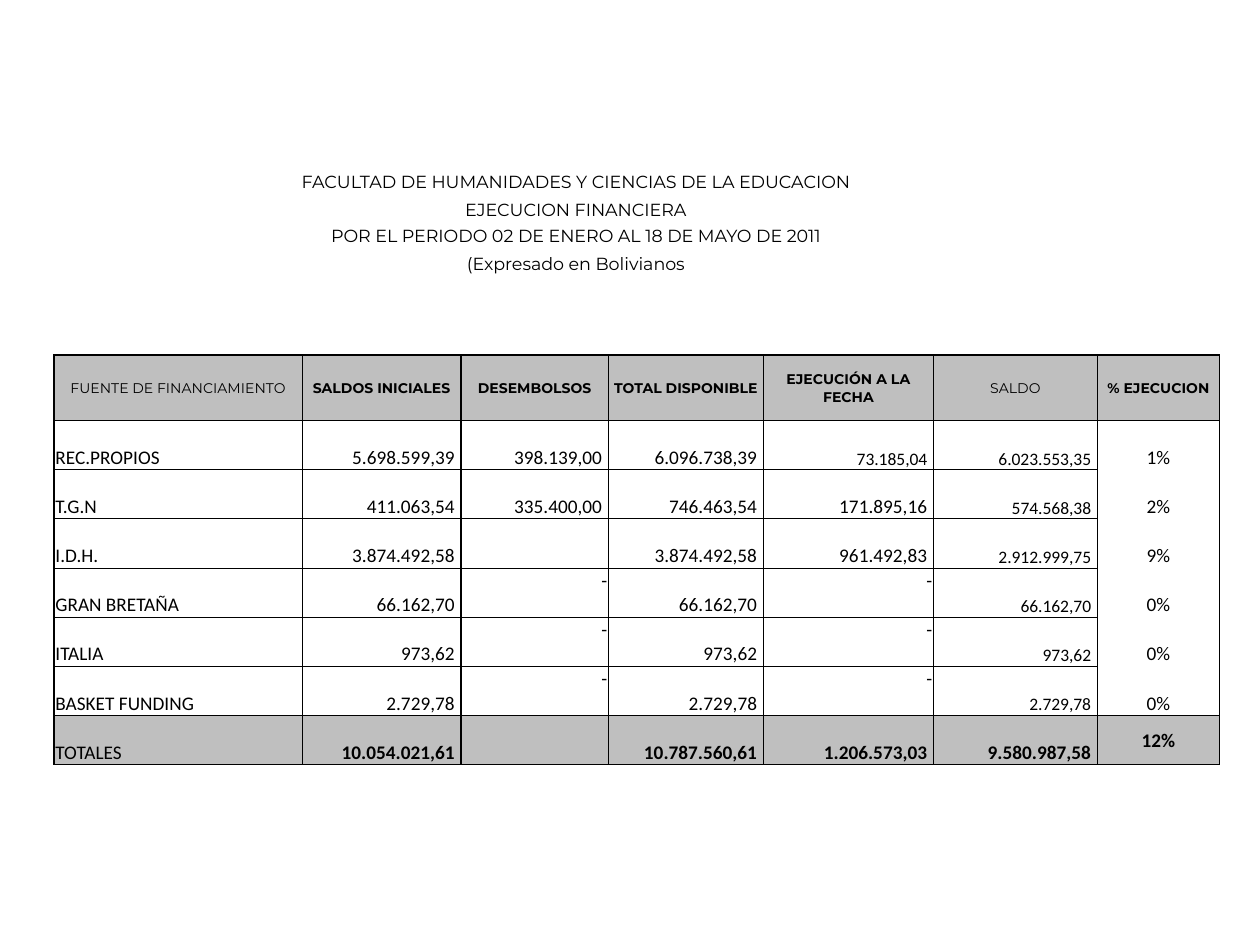
from lxml import etree
from pptx import Presentation, util as u
from pptx.dml.color import RGBColor
from pptx.enum import text
from pptx.oxml.ns import qn

COLORS = {"ink": "000000", "band": "BFBFBF"}
ALIGN = {"l": text.PP_ALIGN.LEFT, "c": text.PP_ALIGN.CENTER, "r": text.PP_ALIGN.RIGHT}
ANCHOR = {"t": text.MSO_ANCHOR.TOP, "m": text.MSO_ANCHOR.MIDDLE, "b": text.MSO_ANCHOR.BOTTOM}

TITLES = [
    "FACULTAD DE HUMANIDADES Y CIENCIAS DE LA EDUCACION",
    "EJECUCION FINANCIERA",
    "POR EL PERIODO 02 DE ENERO AL 18 DE MAYO DE 2011",
    "(Expresado en Bolivianos",
]
HEADINGS = ["FUENTE DE FINANCIAMIENTO", "SALDOS INICIALES", "DESEMBOLSOS", "TOTAL DISPONIBLE",
            "EJECUCIÓN A LA FECHA", "SALDO", "% EJECUCION"]
SOURCES = [
    ["REC.PROPIOS", "5.698.599,39", "398.139,00", "6.096.738,39", "73.185,04", "6.023.553,35", "1%"],
    ["T.G.N", "411.063,54", "335.400,00", "746.463,54", "171.895,16", "574.568,38", "2%"],
    ["I.D.H.", "3.874.492,58", "", "3.874.492,58", "961.492,83", "2.912.999,75", "9%"],
    ["GRAN BRETAÑA", "66.162,70", "-", "66.162,70", "-", "66.162,70", "0%"],
    ["ITALIA", "973,62", "-", "973,62", "-", "973,62", "0%"],
    ["BASKET FUNDING", "2.729,78", "-", "2.729,78", "-", "2.729,78", "0%"],
]
TOTALS = ["TOTALES", "10.054.021,61", "", "10.787.560,61", "1.206.573,03", "9.580.987,58", "12%"]
COLUMN_WIDTHS = [1.97, 1.26, 1.17, 1.23, 1.35, 1.3, 0.97]
TITLE_HEIGHTS = [0.18] + [0.22, 0.21] * 3
HEADING_ROW = len(TITLE_HEIGHTS)
FIRST_SOURCE = HEADING_ROW + 1
LAST_SOURCE = HEADING_ROW + len(SOURCES)
ROW_HEIGHTS = TITLE_HEIGHTS + [0.52] + [0.39] * (len(SOURCES) + 1)
SALDO, PERCENT = 5, 6


class Painter:
    """Holds the table style and the current page."""

    def __init__(self, page):
        self.page = page

    def table(self, left, top, widths, heights):
        frame = self.page.shapes.add_table(
            len(heights), len(widths), u.Inches(left), u.Inches(top),
            u.Inches(sum(widths)), u.Inches(sum(heights)))
        grid = frame.table
        grid.first_row = grid.horz_banding = False
        for column, width in zip(grid.columns, widths):
            column.width = u.Inches(width)
        for row, height in zip(grid.rows, heights):
            row.height = u.Inches(height)
        return grid

    def borders(self, cell, **widths):
        properties = cell._tc.get_or_add_tcPr()
        for side in "LRTB":
            width = widths.get(side, 0)
            line = etree.SubElement(properties, qn(f"a:ln{side}"), w=str(u.Pt(width)))
            if width:
                fill = etree.SubElement(line, qn("a:solidFill"))
                etree.SubElement(fill, qn("a:srgbClr"), val=COLORS["ink"])
            else:
                etree.SubElement(line, qn("a:noFill"))

    def fill(self, cell, color=None):
        if color:
            cell.fill.solid()
            cell.fill.fore_color.rgb = RGBColor.from_string(COLORS[color])
        else:
            cell.fill.background()

    def label(self, cell, words, size=8, font="Calibri", bold=False, align="l", anchor="b", right=0.01):
        cell.margin_left = cell.margin_top = u.Inches(0.01)
        cell.margin_right, cell.margin_bottom = u.Inches(right), 0
        cell.vertical_anchor = ANCHOR[anchor]
        para = cell.text_frame.paragraphs[0]
        para.alignment = ALIGN[align]
        if not words:
            para.font.size = u.Pt(size)
            return
        span = para.add_run()
        span.text = words
        span.font.size, span.font.name, span.font.bold = u.Pt(size), font, bold
        span.font.color.rgb = RGBColor.from_string(COLORS["ink"])


def fill_title(painter, grid):
    for row in range(HEADING_ROW):
        for column in range(len(COLUMN_WIDTHS)):
            cell = grid.cell(row, column)
            painter.borders(cell, B=1 if row == HEADING_ROW - 1 else 0)
            painter.fill(cell)
            words = TITLES[row] if column == 0 and row < len(TITLES) else ""
            painter.label(cell, words, 10, "Montserrat", align="c")
        if row < len(TITLES):
            grid.cell(row, 0).merge(grid.cell(row, PERCENT - 1))


def fill_headings(painter, grid):
    for column, words in enumerate(HEADINGS):
        cell = grid.cell(HEADING_ROW, column)
        painter.borders(cell, L=1, R=1, T=1, B=1)
        painter.fill(cell, "band")
        painter.label(cell, words, 8, "Montserrat", column not in (0, SALDO), "c", "m")


def fill_amounts(painter, grid):
    for row, values in enumerate(SOURCES + [TOTALS], FIRST_SOURCE):
        total = row > LAST_SOURCE
        for column, words in enumerate(values):
            cell = grid.cell(row, column)
            inner = 0 if column == PERCENT else 0.5
            painter.borders(cell, L=1, R=1, T=1 if total or row == FIRST_SOURCE else inner,
                            B=1 if row >= LAST_SOURCE else inner)
            painter.fill(cell, "band" if total else None)
            small = not total and (column == SALDO or words == "73.185,04")
            align = "l" if column == 0 else "c" if column == PERCENT else "r"
            anchor = "t" if words == "-" else "m" if total and column == PERCENT else "b"
            painter.label(cell, words, 10 if small else 11, bold=total and column > 0, align=align,
                          anchor=anchor, right=0.05 if align == "r" and words != "-" else 0.01)


def main():
    deck = Presentation()
    deck.slide_width, deck.slide_height = u.Inches(10), u.Inches(7.5)
    painter = Painter(deck.slides.add_slide(deck.slide_layouts[6]))
    grid = painter.table(0.43, 1.35, COLUMN_WIDTHS, ROW_HEIGHTS)
    fill_title(painter, grid)
    fill_headings(painter, grid)
    fill_amounts(painter, grid)
    deck.save("out.pptx")


if __name__ == "__main__":
    main()
